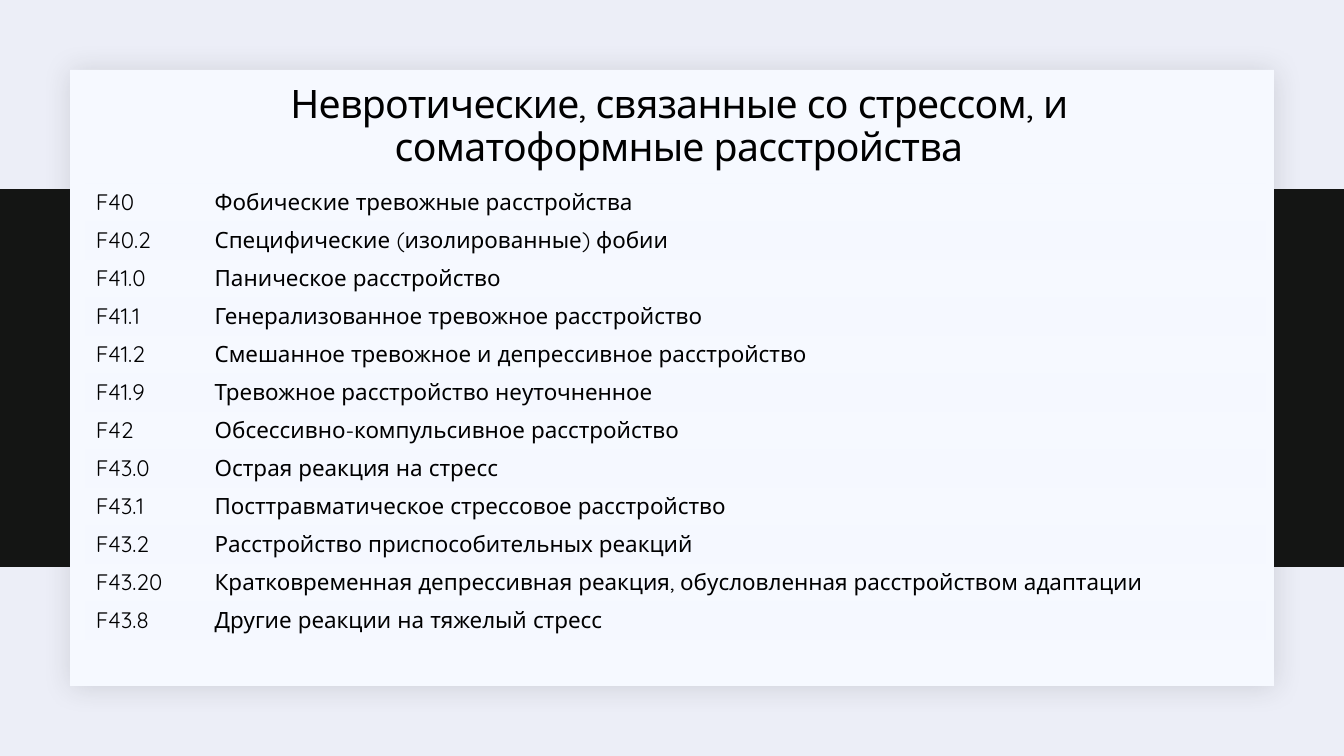
from lxml import etree
from pptx import Presentation
from pptx import util as u
from pptx.dml import color
from pptx.enum import shapes, text
from pptx.oxml import ns, parse_xml

COLORS = {"page": "ECEEF7", "band": "141514", "card": "F6F9FF",
          "shadow": "1F2125", "row": "F5F8FF", "ink": "000000"}
FONT = "Quicksand"
PLAIN_TABLE = "{2D5ABB26-0587-4C30-8999-92F81FD0307C}"
TITLE = "Невротические, связанные со стрессом, и соматоформные расстройства"
DISORDERS = [
    ("F40", "Фобические тревожные расстройства"),
    ("F40.2", "Специфические (изолированные) фобии"),
    ("F41.0", "Паническое расстройство"),
    ("F41.1", "Генерализованное тревожное расстройство"),
    ("F41.2", "Смешанное тревожное и депрессивное расстройство"),
    ("F41.9", "Тревожное расстройство неуточненное"),
    ("F42", "Обсессивно-компульсивное расстройство"),
    ("F43.0", "Острая реакция на стресс"),
    ("F43.1", "Посттравматическое стрессовое расстройство"),
    ("F43.2", "Расстройство приспособительных реакций"),
    ("F43.20", "Кратковременная депрессивная реакция, обусловленная расстройством адаптации"),
    ("F43.8", "Другие реакции на тяжелый стресс"),
]


def rgb(name):
    return color.RGBColor.from_string(COLORS[name])


class SlideBuilder:
    """Holds the current slide and its text and colour style."""

    def __init__(self, page):
        self.page = page
        page.background.fill.solid()
        page.background.fill.fore_color.rgb = rgb("page")

    def add_span(self, para, words, size):
        span = para.add_run()
        span.text = words
        span.font.size = u.Pt(size)
        span.font.name = FONT
        span.font.color.rgb = rgb("ink")
        return span

    def rectangle(self, left, top, width, height, fill):
        box = self.page.shapes.add_shape(
            shapes.MSO_SHAPE.RECTANGLE, u.Pt(left), u.Pt(top), u.Pt(width), u.Pt(height))
        box.shadow.inherit = False
        box.fill.solid()
        box.fill.fore_color.rgb = rgb(fill)
        box.line.fill.background()
        return box

    def soft_shadow(self, box):
        effects = box._element.spPr.find(ns.qn("a:effectLst"))
        effects.append(parse_xml(
            f'<a:outerShdw {ns.nsdecls("a")} blurRad="{u.Pt(20)}" dist="{u.Pt(2)}" '
            f'dir="2700000" algn="tl" rotWithShape="0"><a:srgbClr val="{COLORS["shadow"]}">'
            '<a:alpha val="15000"/></a:srgbClr></a:outerShdw>'))

    def title(self, words, left, top, width, height):
        box = self.page.shapes.title
        box.left, box.top, box.width, box.height = map(u.Pt, (left, top, width, height))
        frame = box.text_frame
        frame.word_wrap = True
        frame.auto_size = text.MSO_AUTO_SIZE.NONE
        frame.vertical_anchor = text.MSO_ANCHOR.MIDDLE
        para = frame.paragraphs[0]
        para.alignment = text.PP_ALIGN.CENTER
        para.line_spacing = 0.9
        span = self.add_span(para, words, 28)
        span.font._element.set("spc", "-50")
        self.page.shapes._spTree.append(box._element)  # in front of the card

    def border(self, cell, side):
        """Draw a 1 pt line; side is lnT or lnB. Call before the cell is filled."""
        cell._tc.get_or_add_tcPr().append(parse_xml(
            f'<a:{side} {ns.nsdecls("a")} w="{u.Pt(1)}"><a:solidFill>'
            f'<a:srgbClr val="{COLORS["row"]}"/></a:solidFill></a:{side}>'))

    def fill_cell(self, cell, shaded):
        if not shaded:
            cell.fill.background()
            return
        cell.fill.solid()
        cell.fill.fore_color.rgb = rgb("row")
        tint = cell._tc.tcPr.find(ns.qn("a:solidFill")).find(ns.qn("a:srgbClr"))
        etree.SubElement(tint, ns.qn("a:alpha")).set("val", "20000")

    def table(self, rows, left, top, widths, row_height):
        frame = self.page.shapes.add_table(
            len(rows), len(widths), u.Pt(left), u.Pt(top),
            u.Pt(sum(widths)), u.Pt(row_height * len(rows)))
        table = frame.table
        table.first_row = table.horz_banding = False
        table._tbl.tblPr.find(ns.qn("a:tableStyleId")).text = PLAIN_TABLE
        for column, width in zip(table.columns, widths):
            column.width = u.Pt(width)
        for index, row in enumerate(rows):
            table.rows[index].height = u.Pt(row_height)
            for cell, words in zip(table.rows[index].cells, row):
                self.add_span(cell.text_frame.paragraphs[0], words, 16)
                if index == 0:
                    self.border(cell, "lnT")
                if index in (0, len(rows) - 1):
                    self.border(cell, "lnB")
                self.fill_cell(cell, shaded=index % 2 == 1)


def main():
    deck = Presentation()
    deck.slide_width, deck.slide_height = u.Pt(960), u.Pt(540)
    slide = SlideBuilder(deck.slides.add_slide(deck.slide_layouts[5]))
    slide.rectangle(0, 135, 960, 270, "band")
    slide.soft_shadow(slide.rectangle(50, 50, 860, 440, "card"))
    slide.title(TITLE, 94.3, 51, 781.2, 80)
    slide.table(DISORDERS, 61.2, 131, (85, 758), 26.4)
    deck.save("out.pptx")


if __name__ == "__main__":
    main()
